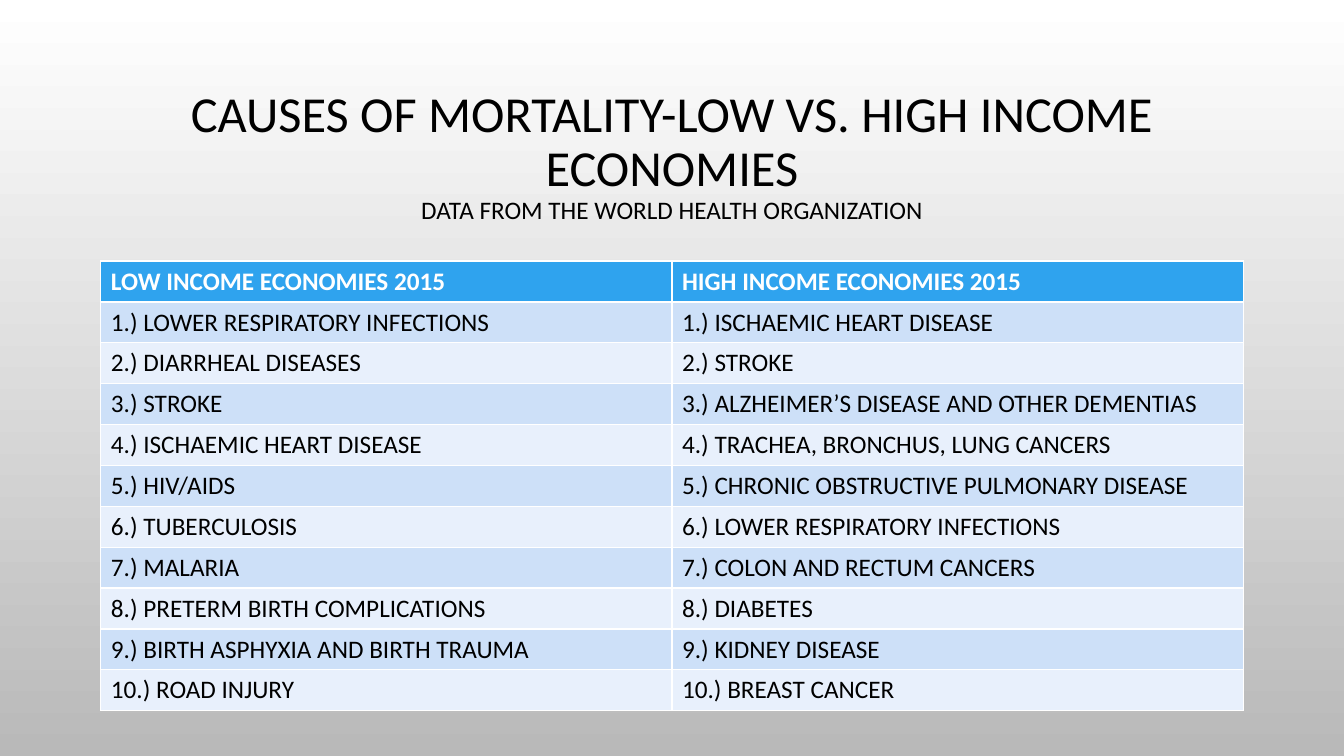
import pptx
import pptx.dml.color
import pptx.enum.text
import pptx.oxml.ns
import pptx.util
from lxml import etree

Inches, Pt = pptx.util.Inches, pptx.util.Pt

COLORS = {
    "top": "FFFFFF", "bottom": "B9B9B9",
    "text": "000000", "header_text": "FFFFFF",
    "header": "2FA3EE", "odd_row": "CDE0F8", "even_row": "E8F0FC",
}
LOW_INCOME = [
    "LOWER RESPIRATORY INFECTIONS", "DIARRHEAL DISEASES", "STROKE",
    "ISCHAEMIC HEART DISEASE", "HIV/AIDS", "TUBERCULOSIS", "MALARIA",
    "PRETERM BIRTH COMPLICATIONS", "BIRTH ASPHYXIA AND BIRTH TRAUMA",
    "ROAD INJURY",
]
HIGH_INCOME = [
    "ISCHAEMIC HEART DISEASE", "STROKE",
    "ALZHEIMER’S DISEASE AND OTHER DEMENTIAS",
    "TRACHEA, BRONCHUS, LUNG CANCERS",
    "CHRONIC OBSTRUCTIVE PULMONARY DISEASE",
    "LOWER RESPIRATORY INFECTIONS", "COLON AND RECTUM CANCERS", "DIABETES",
    "KIDNEY DISEASE", "BREAST CANCER",
]


def rgb(name):
    return pptx.dml.color.RGBColor.from_string(COLORS[name])


def format_run(r, size, color, bold=False):
    r.font.name = "Calibri"
    r.font.size = Pt(size)
    r.font.bold = bold
    r.font.color.rgb = rgb(color)


prs = pptx.Presentation()
prs.slide_width, prs.slide_height = Inches(13.33), Inches(7.5)
s = prs.slides.add_slide(prs.slide_layouts[5])

# Background
fill = s.background.fill
fill.gradient()
fill.gradient_angle = 270
for stop, name in zip(fill.gradient_stops, ("top", "bottom")):
    stop.color.rgb = rgb(name)

# Title
title = s.shapes.title
title.left, title.top = Inches(1), Inches(0.68)
title.width, title.height = Inches(11.33), Inches(1.75)
tf = title.text_frame
tf.word_wrap = True
tf.auto_size = pptx.enum.text.MSO_AUTO_SIZE.NONE
tf.vertical_anchor = pptx.enum.text.MSO_ANCHOR.MIDDLE
p = tf.paragraphs[0]
p.text = ("CAUSES OF MORTALITY-LOW VS. HIGH INCOME ECONOMIES\v"
          "DATA FROM THE WORLD HEALTH ORGANIZATION")
p.alignment = pptx.enum.text.PP_ALIGN.CENTER
p.line_spacing = 0.9
for r, size in zip(p.runs, (36, 18)):
    format_run(r, size, "text")
# The line break needs the heading size too, or it stretches its line
line_break = p._p.find(pptx.oxml.ns.qn("a:br"))
etree.SubElement(line_break, pptx.oxml.ns.qn("a:rPr"), sz="3600")

# Table: the default style supplies the white cell borders
rows = [("LOW INCOME ECONOMIES 2015", "HIGH INCOME ECONOMIES 2015")]
for rank, causes in enumerate(zip(LOW_INCOME, HIGH_INCOME), 1):
    rows.append([f"{rank}.) {cause}" for cause in causes])

table = s.shapes.add_table(len(rows), 2, Inches(1), Inches(2.59),
                           Inches(11.33), Inches(4.46)).table
for i, row in enumerate(rows):
    is_header = i == 0
    row_fill = "header" if is_header else "odd_row" if i % 2 else "even_row"
    for j, text in enumerate(row):
        cell = table.cell(i, j)
        cell.text_frame.text = text
        cell.fill.solid()
        cell.fill.fore_color.rgb = rgb(row_fill)
        format_run(cell.text_frame.paragraphs[0].runs[0], 18,
                   "header_text" if is_header else "text", is_header)

prs.save("out.pptx")
